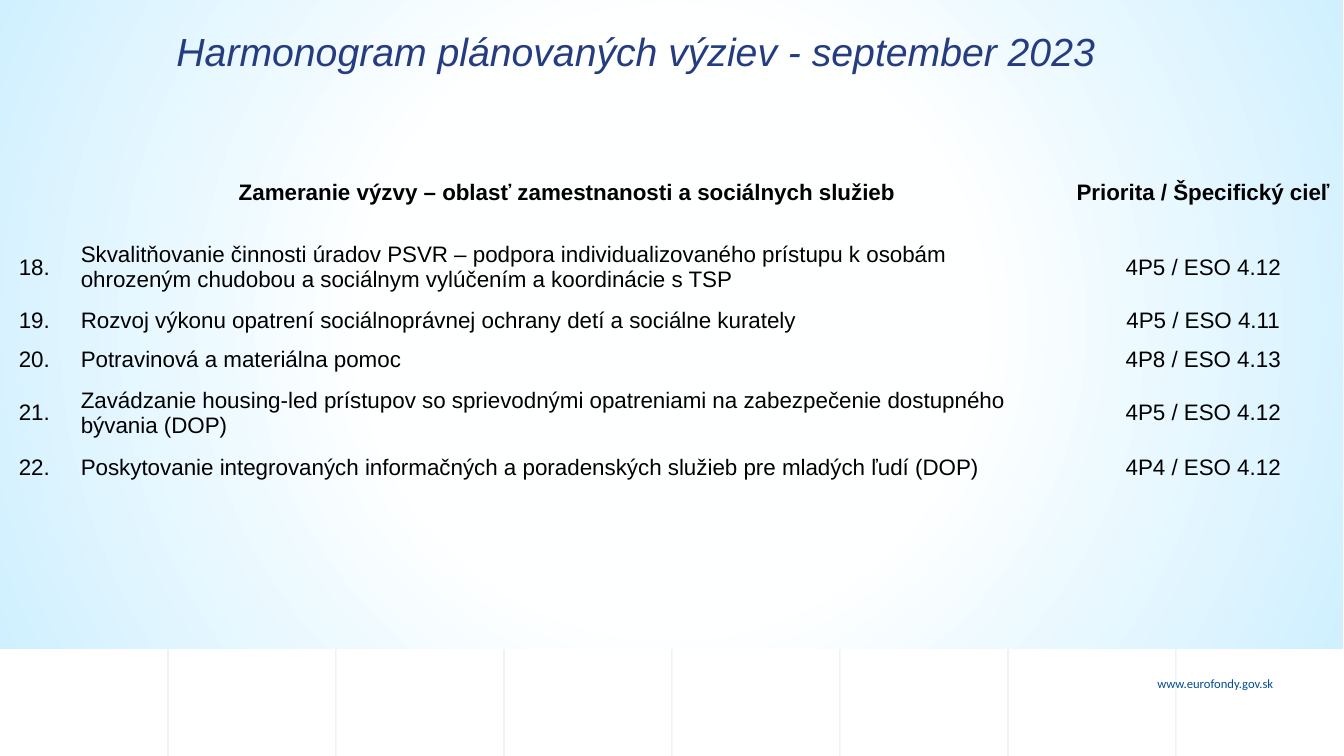
from dataclasses import dataclass

from lxml import etree
from pptx import Presentation
from pptx.dml.color import RGBColor
from pptx.enum.shapes import MSO_CONNECTOR, MSO_SHAPE
from pptx.enum.text import MSO_ANCHOR, PP_ALIGN
from pptx.oxml.ns import qn
from pptx.util import Pt

STRAIGHT = MSO_CONNECTOR.STRAIGHT
RECTANGLE = MSO_SHAPE.RECTANGLE
MIDDLE = MSO_ANCHOR.MIDDLE
LEFT, CENTER, RIGHT = PP_ALIGN.LEFT, PP_ALIGN.CENTER, PP_ALIGN.RIGHT


@dataclass(frozen=True)
class Theme:
    navy: RGBColor = RGBColor(0x26, 0x3C, 0x80)
    blue: RGBColor = RGBColor(0x00, 0x4C, 0x96)
    black: RGBColor = RGBColor(0x00, 0x00, 0x00)
    white: RGBColor = RGBColor(0xFF, 0xFF, 0xFF)
    glow: RGBColor = RGBColor(0xFE, 0xFF, 0xFF)
    sky: RGBColor = RGBColor(0xD0, 0xF0, 0xFF)
    body_font: str = "Arial"
    footer_font: str = "Calibri"
    title_size: float = 28
    body_size: float = 16
    footer_size: float = 9


THEME = Theme()
WIDTH, HEIGHT = 960, 540
STRIPE_COUNT = 8
STRIPE_WIDTH = WIDTH / STRIPE_COUNT
PLAIN_TABLE_STYLE = "{2D5ABB26-0587-4C30-8999-92F81FD0307C}"
COLUMN_WIDTHS = (52, 709, 200)
COLUMN_ALIGNMENTS = (CENTER, LEFT, CENTER)
ROW_HEIGHTS = (59, 48, 28, 28, 48, 30)
CALLS = (
    ("", "Zameranie výzvy – oblasť zamestnanosti a sociálnych služieb", "Priorita / Špecifický cieľ"),
    ("18.", "Skvalitňovanie činnosti úradov PSVR – podpora individualizovaného prístupu k osobám "
     "ohrozeným chudobou a sociálnym vylúčením a koordinácie s TSP", "4P5 / ESO 4.12"),
    ("19.", "Rozvoj výkonu opatrení sociálnoprávnej ochrany detí a sociálne kurately", "4P5 / ESO 4.11"),
    ("20.", "Potravinová a materiálna pomoc", "4P8 / ESO 4.13"),
    ("21.", "Zavádzanie housing-led prístupov so sprievodnými opatreniami na zabezpečenie "
     "dostupného bývania (DOP)", "4P5 / ESO 4.12"),
    ("22.", "Poskytovanie integrovaných informačných a poradenských služieb pre mladých ľudí (DOP)",
     "4P4 / ESO 4.12"),
)


def set_opacity(fill_parent, percent):
    color = next(fill_parent.iter(qn("a:srgbClr")))
    etree.SubElement(color, qn("a:alpha")).set("val", str(percent * 1000))


def style_paragraph(paragraph, font_name, size, color, alignment, bold=False, italic=False):
    paragraph.alignment = alignment
    font = paragraph.font
    font.name, font.size, font.bold, font.italic = font_name, Pt(size), bold, italic
    font.color.rgb = color


def add_divider(slide, x):
    divider = slide.shapes.add_connector(STRAIGHT, Pt(x), Pt(0), Pt(x), Pt(HEIGHT))
    divider.line.color.rgb = THEME.blue
    divider.line.width = Pt(0.75)
    properties = divider._element.spPr
    set_opacity(properties, 10)
    etree.SubElement(properties, qn("a:effectLst"))


def add_rectangle(slide, left, top, width, height):
    rectangle = slide.shapes.add_shape(RECTANGLE, Pt(left), Pt(top), Pt(width), Pt(height))
    rectangle.shadow.inherit = False
    rectangle.line.fill.background()
    return rectangle


def add_stripe(slide, left):
    stripe = add_rectangle(slide, left, 0, STRIPE_WIDTH, HEIGHT)
    stripe.fill.solid()
    stripe.fill.fore_color.rgb = THEME.white
    set_opacity(stripe._element.spPr, 4)


def add_glow(slide):
    glow = add_rectangle(slide, -1.5, -3, 961, 466.5)
    glow.fill.gradient()
    gradient = glow._element.spPr.find(qn("a:gradFill"))
    for child in list(gradient):
        gradient.remove(child)
    stops = etree.SubElement(gradient, qn("a:gsLst"))
    for position, color in ((0, THEME.glow), (40, THEME.glow), (100, THEME.sky)):
        stop = etree.SubElement(stops, qn("a:gs"), pos=str(position * 1000))
        etree.SubElement(stop, qn("a:srgbClr"), val=str(color))
    circle = etree.SubElement(gradient, qn("a:path"), path="circle")
    etree.SubElement(circle, qn("a:fillToRect"), l="50000", t="50000", r="50000", b="50000")


def add_text(slide, box, text, *style, italic=False):
    frame = slide.shapes.add_textbox(*(Pt(length) for length in box)).text_frame
    frame.word_wrap = True
    paragraph = frame.paragraphs[0]
    paragraph.text = text
    style_paragraph(paragraph, *style, italic=italic)


def add_calls_table(slide):
    table = slide.shapes.add_table(
        len(CALLS), len(COLUMN_WIDTHS), Pt(-1.5), Pt(108), Pt(sum(COLUMN_WIDTHS)), Pt(sum(ROW_HEIGHTS))
    ).table
    table.first_row = table.horz_banding = False
    table._tbl.tblPr.find(qn("a:tableStyleId")).text = PLAIN_TABLE_STYLE
    for column, width in zip(table.columns, COLUMN_WIDTHS):
        column.width = Pt(width)
    for row_index, (row, height, texts) in enumerate(zip(table.rows, ROW_HEIGHTS, CALLS)):
        row.height = Pt(height)
        header = row_index == 0
        for cell, text, alignment in zip(row.cells, texts, COLUMN_ALIGNMENTS):
            cell.fill.background()
            cell.vertical_anchor = MIDDLE
            paragraph = cell.text_frame.paragraphs[0]
            paragraph.text = text
            style_paragraph(paragraph, THEME.body_font, THEME.body_size, THEME.black,
                            CENTER if header else alignment, bold=header)


def main():
    presentation = Presentation()
    presentation.slide_width, presentation.slide_height = Pt(WIDTH), Pt(HEIGHT)
    slide = presentation.slides.add_slide(presentation.slide_layouts[6])
    for index in range(1, STRIPE_COUNT):
        add_divider(slide, index * STRIPE_WIDTH)
    for index in range(STRIPE_COUNT):
        add_stripe(slide, index * STRIPE_WIDTH)
    add_text(slide, (772.5, 479.5, 144, 18), "www.eurofondy.gov.sk",
             THEME.footer_font, THEME.footer_size, THEME.blue, RIGHT)
    add_glow(slide)
    add_text(slide, (11, 16, 886, 41), "Harmonogram plánovaných výziev - september 2023",
             THEME.body_font, THEME.title_size, THEME.navy, CENTER, italic=True)
    add_calls_table(slide)
    presentation.save("out.pptx")


if __name__ == "__main__":
    main()
